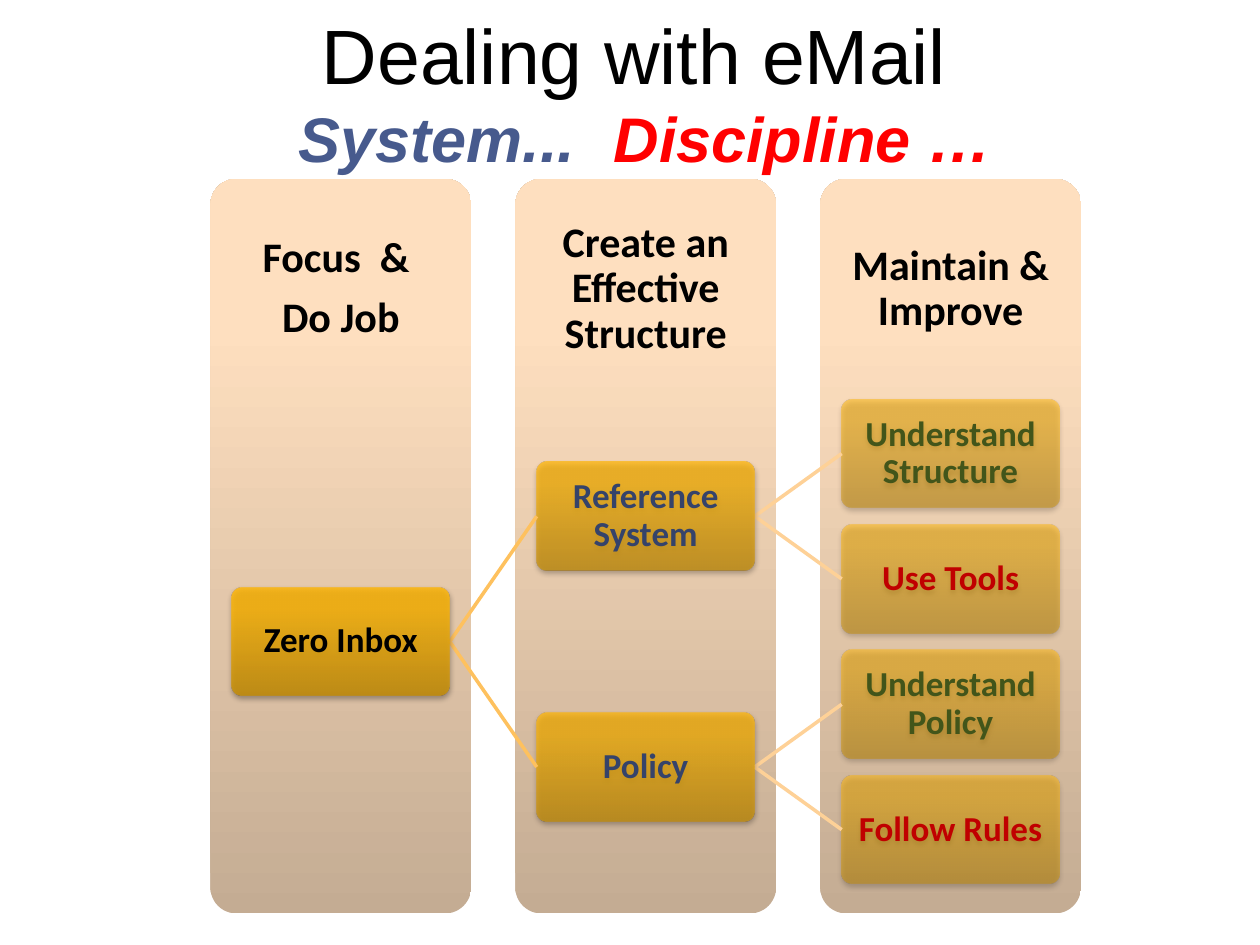
from lxml import etree
from pptx import Presentation
from pptx.dml.color import RGBColor
from pptx.enum.shapes import MSO_CONNECTOR as Link, MSO_SHAPE as Shape
from pptx.enum.text import MSO_ANCHOR as Anchor, MSO_AUTO_SIZE as Fit, PP_ALIGN as Align
from pptx.oxml import parse_xml
from pptx.oxml.ns import nsdecls, qn
from pptx.util import Inches, Pt

LEFT, TOP, WIDE, HIGH = 1.67, 1.42, 2.07, 5.83
STEP = 2.42
NODE_W, NODE_H = 1.73, 0.86
INSET = (WIDE - NODE_W) / 2
LEAF_Y, ROW = 3.6, 0.995
SAND = ("C4AC93", "FEDFBF", "FFE0C0")
GOLD = ("C58C00", "FFB601", "FFB602")
ALPHA = (80, 70, 50)
LINKS = ("FEC15E", "FED197")
HEADS = (("Focus  & ", "Do Job"), ("Create an Effective Structure",), ("Maintain & Improve",))
TREE = ("Zero Inbox", "000000", [
    ("Reference System", "35436A", [
        ("Understand Structure", "42551A", []),
        ("Use Tools", "C00000", [])]),
    ("Policy", "35436A", [
        ("Understand Policy", "42551A", []),
        ("Follow Rules", "C00000", [])])])


def color(code):
    return RGBColor.from_string(code)


def style(para, font, size, code, bold=False, italic=False):
    para.alignment = Align.CENTER
    para.font.name, para.font.size = font, Pt(size)
    para.font.bold, para.font.italic = bold, italic
    para.font.color.rgb = color(code)


def shade(shape, codes, alpha=100):
    stops = "".join(
        f'<a:gs pos="{pos * 1000}"><a:srgbClr val="{code}">'
        f'<a:alpha val="{alpha * 1000}"/></a:srgbClr></a:gs>'
        for pos, code in zip((0, 80, 100), codes))
    grad = parse_xml(f'<a:gradFill {nsdecls("a")} rotWithShape="1"><a:gsLst>{stops}</a:gsLst>'
                     '<a:lin ang="16200000" scaled="0"/></a:gradFill>')
    shape._element.spPr.find(qn("a:prstGeom")).addnext(grad)


def drop(shape):
    effect = shape._element.spPr.find(qn("a:effectLst"))
    effect.append(parse_xml(
        f'<a:outerShdw {nsdecls("a")} blurRad="{Pt(3.1)}" dist="{Pt(1.7)}" dir="5400000" '
        'rotWithShape="0"><a:srgbClr val="000000"><a:alpha val="37000"/></a:srgbClr></a:outerShdw>'))


def card(slide, box, codes, alpha=100):
    shape = slide.shapes.add_shape(Shape.ROUNDED_RECTANGLE, *map(Inches, box))
    shape.adjustments[0] = 0.1
    shape.shadow.inherit = False
    shape.line.fill.background()
    shade(shape, codes, alpha)
    return shape


def write(frame, lines, size, code, pad):
    frame.word_wrap, frame.vertical_anchor = True, Anchor.MIDDLE
    frame.margin_left = frame.margin_right = Inches(pad)
    frame.margin_top = frame.margin_bottom = Inches(pad)
    frame.text = "\n".join(lines)
    for para in frame.paragraphs:
        style(para, "Calibri", size, code, bold=True)
        para.line_spacing, para.space_after = 0.9, Pt(size * 0.35)


def panel(slide, box, lines):
    x, y, w, h = box
    card(slide, box, SAND)
    head = slide.shapes.add_textbox(*map(Inches, (x, y, w, h * 0.3)))
    write(head.text_frame, lines, 24, "000000", 0.19)


def join(slide, start, end, code):
    line = slide.shapes.add_connector(Link.STRAIGHT, *map(Inches, start + end))
    line.line.color.rgb, line.line.width = color(code), Pt(2)
    etree.SubElement(line._element.spPr, qn("a:effectLst"))


def branch(slide, tree, level, row):
    text, code, kids = tree
    x = LEFT + level * STEP + INSET
    ends = []
    last = row
    for kid in kids:
        end, last = branch(slide, kid, level + 1, last)
        ends.append(end)
    y = sum(end[1] for end in ends) / len(ends) if ends else LEAF_Y + row * ROW
    for end in ends:
        join(slide, (x + NODE_W, y), end, LINKS[level])
    node = card(slide, (x, y - NODE_H / 2, NODE_W, NODE_H), GOLD, ALPHA[level])
    drop(node)
    write(node.text_frame, [text], 20, code, 0.04)
    return (x, y), last if kids else row + 1


def title(slide, box):
    head = slide.shapes.title
    head.left, head.top, head.width, head.height = map(Inches, box)
    frame = head.text_frame
    frame.auto_size, frame.vertical_anchor = Fit.NONE, Anchor.MIDDLE
    frame.text = "Dealing with eMail "
    style(frame.paragraphs[0], "Arial", 44, "000000")
    para = frame.add_paragraph()
    style(para, "Arial", 36, "475A8D", bold=True, italic=True)
    for text, code in (("System... \t", "475A8D"), ("Discipline …", "FF0000")):
        run = para.add_run()
        run.text = text
        run.font.color.rgb = color(code)


def main():
    deck = Presentation()
    deck.slide_width, deck.slide_height = Inches(10), Inches(7.5)
    slide = deck.slides.add_slide(deck.slide_layouts[5])
    title(slide, (0.58, 0, 9.08, 1.45))
    for col, lines in enumerate(HEADS):
        panel(slide, (LEFT + col * STEP, TOP, WIDE, HIGH), lines)
    branch(slide, TREE, 0, 0)
    deck.save("out.pptx")


if __name__ == "__main__":
    main()
